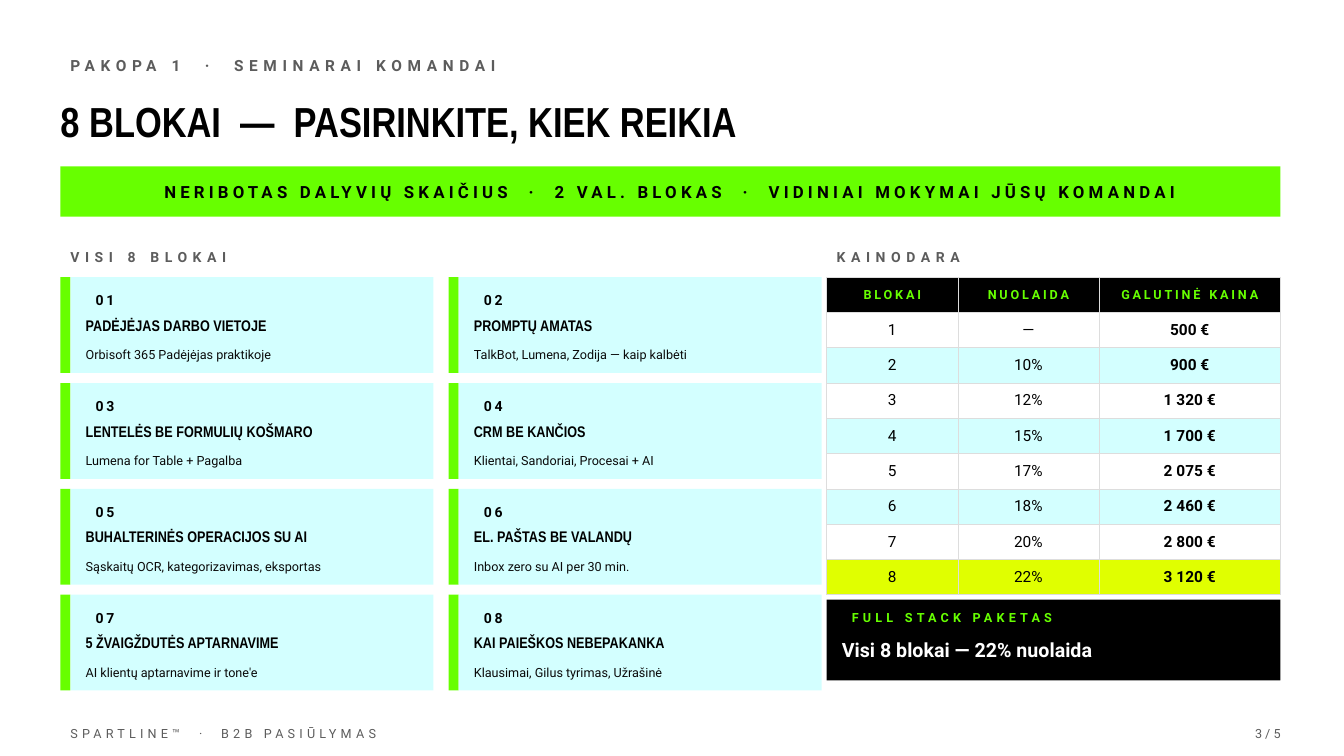
from lxml.etree import SubElement
from pptx import Presentation
from pptx.dml.color import RGBColor
from pptx.enum.shapes import MSO_SHAPE
from pptx.enum.text import MSO_ANCHOR, MSO_AUTO_SIZE, PP_ALIGN
from pptx.oxml.ns import qn
from pptx.util import Inches, Pt

COLORS = {
    "white": "FFFFFF", "black": "000000", "ink": "0A0A0A", "gray": "5C5C5C",
    "green": "67FF00", "ice": "D3FFFF", "lime": "E0FF00", "border": "DDDDDD",
}
BODY_FONT = "Roboto"
HEAD_FONT = "Arial Narrow"

BLOCKS = [
    ("PADĖJĖJAS DARBO VIETOJE", "Orbisoft 365 Padėjėjas praktikoje"),
    ("PROMPTŲ AMATAS", "TalkBot, Lumena, Zodija — kaip kalbėti"),
    ("LENTELĖS BE FORMULIŲ KOŠMARO", "Lumena for Table + Pagalba"),
    ("CRM BE KANČIOS", "Klientai, Sandoriai, Procesai + AI"),
    ("BUHALTERINĖS OPERACIJOS SU AI", "Sąskaitų OCR, kategorizavimas, eksportas"),
    ("EL. PAŠTAS BE VALANDŲ", "Inbox zero su AI per 30 min."),
    ("5 ŽVAIGŽDUTĖS APTARNAVIME", "AI klientų aptarnavime ir tone'e"),
    ("KAI PAIEŠKOS NEBEPAKANKA", "Klausimai, Gilus tyrimas, Užrašinė"),
]
PRICES = [
    ("BLOKAI", "NUOLAIDA", "GALUTINĖ KAINA"),
    ("1", "—", "500 €"),
    ("2", "10%", "900 €"),
    ("3", "12%", "1 320 €"),
    ("4", "15%", "1 700 €"),
    ("5", "17%", "2 075 €"),
    ("6", "18%", "2 460 €"),
    ("7", "20%", "2 800 €"),
    ("8", "22%", "3 120 €"),
]


def rgb(name):
    return RGBColor.from_string(COLORS[name])


class SlideBuilder:
    def __init__(self, slide):
        self.slide = slide

    def add_text_run(self, frame, text, size, color, bold=False, spacing=0,
                     font=BODY_FONT, align=PP_ALIGN.LEFT):
        paragraph = frame.paragraphs[0]
        paragraph.alignment = align
        run = paragraph.add_run()
        run.text = text
        run.font.name = font
        run.font.size = Pt(size)
        run.font.bold = bold
        run.font.color.rgb = rgb(color)
        if spacing:
            run._r.get_or_add_rPr().set("spc", str(spacing * 100))

    def set_frame(self, frame, inset):
        frame.word_wrap = True
        frame.auto_size = MSO_AUTO_SIZE.NONE
        frame.vertical_anchor = MSO_ANCHOR.MIDDLE
        if not inset:
            frame.margin_left = frame.margin_right = 0
            frame.margin_top = frame.margin_bottom = 0

    def title(self, box, text, size):
        shape = self.slide.shapes.title
        shape.left, shape.top, shape.width, shape.height = map(Inches, box)
        self.set_frame(shape.text_frame, inset=False)
        self.add_text_run(shape.text_frame, text, size, "black", True, font=HEAD_FONT)

    def text(self, box, text, size, color, inset=True, **style):
        shape = self.slide.shapes.add_textbox(*map(Inches, box))
        self.set_frame(shape.text_frame, inset)
        self.add_text_run(shape.text_frame, text, size, color, **style)

    def label(self, box, text, size, color="gray", spacing=4):
        self.text(box, text, size, color, bold=True, spacing=spacing)

    def rectangle(self, box, color):
        shape = self.slide.shapes.add_shape(MSO_SHAPE.RECTANGLE, *map(Inches, box))
        shape.shadow.inherit = False
        shape.fill.solid()
        shape.fill.fore_color.rgb = rgb(color)
        shape.line.fill.background()

    def card(self, left, top, number, heading, detail):
        self.rectangle((left, top, 0.1, 0.95), "green")
        self.rectangle((left + 0.1, top, 3.6, 0.95), "ice")
        text_left = left + 0.25
        self.label((text_left, top + 0.1, 0.5, 0.25), f"{number:02d}", 10, "black", 2)
        self.text((text_left, top + 0.3, 3.4, 0.35), heading, 11, "black",
                  inset=False, bold=True, font=HEAD_FONT)
        self.text((text_left, top + 0.62, 3.4, 0.3), detail, 9, "ink", inset=False)

    def cell_borders(self, cell):
        properties = cell._tc.get_or_add_tcPr()
        for side in ("a:lnL", "a:lnR", "a:lnT", "a:lnB"):
            line = SubElement(properties, qn(side), w=str(Pt(0.5)))
            fill = SubElement(line, qn("a:solidFill"))
            SubElement(fill, qn("a:srgbClr"), val=COLORS["border"])

    def price_table(self, left, top, widths, row_height, rows):
        table = self.slide.shapes.add_table(
            len(rows), len(widths), Inches(left), Inches(top),
            Inches(sum(widths)), Inches(row_height * len(rows))).table
        for column, width in zip(table.columns, widths):
            column.width = Inches(width)
        for row_index, values in enumerate(rows):
            table.rows[row_index].height = Inches(row_height)
            is_header = row_index == 0
            if is_header:
                background = "black"
            elif row_index == len(rows) - 1:
                background = "lime"
            else:
                background = "white" if row_index % 2 else "ice"
            for column_index, value in enumerate(values):
                cell = table.cell(row_index, column_index)
                self.cell_borders(cell)
                cell.fill.solid()
                cell.fill.fore_color.rgb = rgb(background)
                cell.vertical_anchor = MSO_ANCHOR.MIDDLE
                self.add_text_run(cell.text_frame, value, 9 if is_header else 11,
                                  "green" if is_header else "black",
                                  bold=is_header or column_index == 2,
                                  spacing=2 if is_header else 0, align=PP_ALIGN.CENTER)


def main():
    presentation = Presentation()
    presentation.slide_width = Inches(13.33)
    presentation.slide_height = Inches(7.5)
    builder = SlideBuilder(presentation.slides.add_slide(presentation.slide_layouts[5]))

    # Heading
    builder.label((0.6, 0.5, 8, 0.3), "PAKOPA 1  ·  SEMINARAI KOMANDAI", 11)
    builder.title((0.6, 0.85, 12.5, 0.7), "8 BLOKAI  —  PASIRINKITE, KIEK REIKIA", 30)

    # Banner
    banner = (0.6, 1.65, 12.1, 0.5)
    builder.rectangle(banner, "green")
    builder.text(
        banner,
        "NERIBOTAS DALYVIŲ SKAIČIUS  ·  2 VAL. BLOKAS  ·  VIDINIAI MOKYMAI JŪSŲ KOMANDAI",
        12, "black", inset=False, bold=True, spacing=3, align=PP_ALIGN.CENTER)

    # Training blocks in two columns
    builder.label((0.6, 2.4, 7, 0.3), "VISI 8 BLOKAI", 10)
    for index, (heading, detail) in enumerate(BLOCKS):
        row, column = divmod(index, 2)
        builder.card(0.6 + 3.85 * column, 2.75 + 1.05 * row, index + 1, heading, detail)

    # Pricing
    builder.label((8.2, 2.4, 5, 0.3), "KAINODARA", 10)
    builder.price_table(8.2, 2.75, (1.3, 1.4, 1.8), 0.35, PRICES)

    # Full package
    builder.rectangle((8.2, 5.95, 4.5, 0.8), "black")
    builder.label((8.35, 6, 4.3, 0.25), "FULL STACK PAKETAS", 9, "green", 3)
    builder.text((8.35, 6.25, 4.3, 0.4), "Visi 8 blokai — 22% nuolaida", 14, "white",
                 inset=False, bold=True)

    # Footer
    builder.text((0.6, 7.15, 6, 0.25), "SPARTLINE™  ·  B2B PASIŪLYMAS", 9, "gray", spacing=3)
    builder.text((12, 7.15, 0.8, 0.25), "3 / 5", 9, "gray", align=PP_ALIGN.RIGHT)

    presentation.save("out.pptx")


if __name__ == "__main__":
    main()
